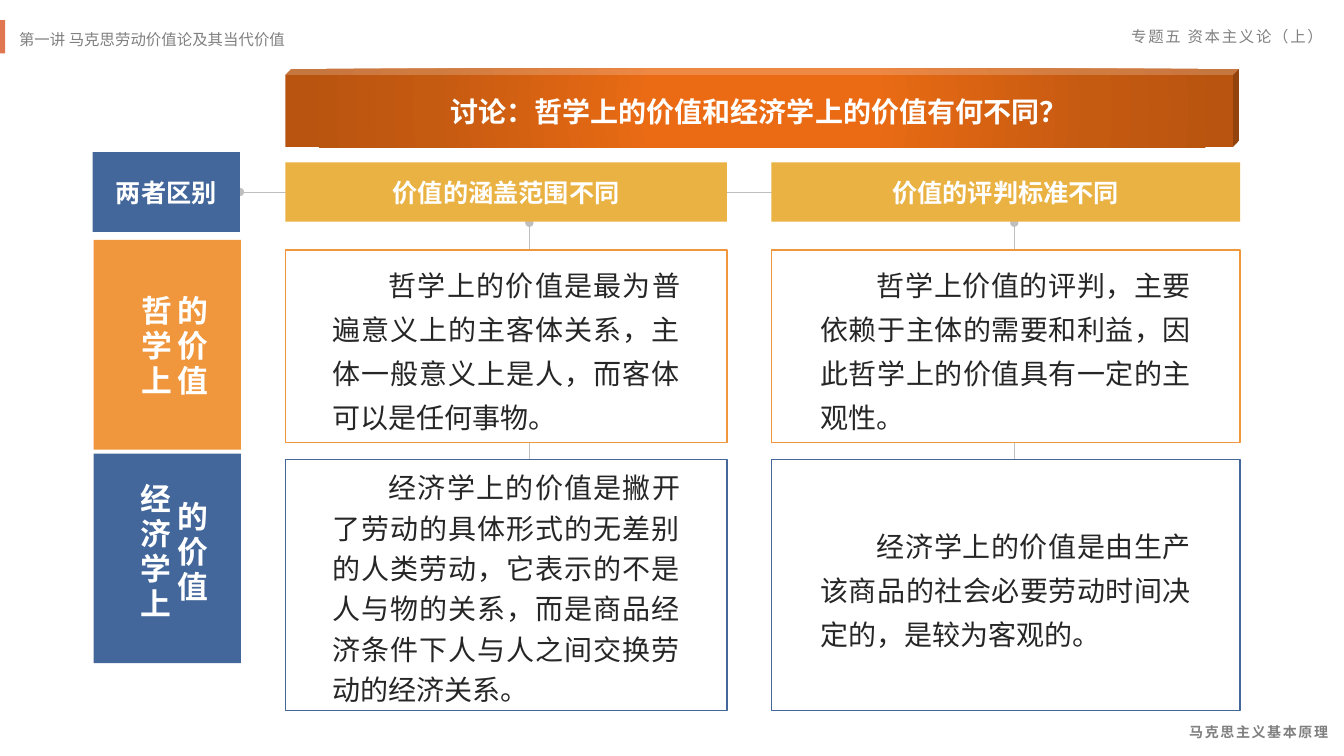
from lxml.etree import SubElement
from pptx import Presentation
from pptx.dml.color import RGBColor
from pptx.enum.shapes import MSO_CONNECTOR, MSO_SHAPE
from pptx.enum.text import MSO_ANCHOR, PP_ALIGN
from pptx.oxml import parse_xml
from pptx.oxml.ns import nsdecls, qn
from pptx.util import Inches, Pt

FONT = "Noto Sans CJK SC"
HUES = {"blue": "43679B", "orange": "F0963D", "gold": "E9B243", "red": "E17751",
        "gray": "808080", "rule": "BFBFBF", "ink": "262626", "white": "FFFFFF"}
GLOW = [(0, "EA6B14"), (23, "EA6B14"), (69, "C55A11"), (97, "B85410")]
TITLE = "讨论：哲学上的价值和经济学上的价值有何不同？"
CORNER = "两者区别"
NOTES = [
    ("专题五 资本主义论（上）", (10.2, 0.22, 3.02, 0.29), PP_ALIGN.RIGHT, 11, False, 1, 1.2),
    ("第一讲 马克思劳动价值论及其当代价值", (0.09, 0.21, 7.79, 0.3), PP_ALIGN.LEFT, 11, False, 1.2, 0),
    ("马克思主义基本原理", (10.68, 7.04, 2.59, 0.32), PP_ALIGN.RIGHT, 10, True, 1.5, 1.2),
]
COLS = [("价值的涵盖范围不同", 2.83, 4.38, 5.25), ("价值的评判标准不同", 7.65, 4.65, 10.06)]
ROWS = [
    {"name": ["的价值", "哲学上"], "hue": "orange", "side": 2.38, "top": 2.48, "high": 1.91,
     "label": (1.2, 2.83, 0.94, 1.15), "wrap": False, "align": PP_ALIGN.LEFT,
     "cards": [("哲学上的价值是最为普遍意义上的主客体关系，主体一般意义上是人，而客体可以是任何事物。", 1.3),
               ("哲学上价值的评判，主要依赖于主体的需要和利益，因此哲学上的价值具有一定的主观性。", 1.3)]},
    {"name": ["的价值", "经济学上"], "hue": "blue", "side": 4.5, "top": 4.56, "high": 2.49,
     "label": (1.19, 4.7, 0.94, 1.68), "wrap": True, "align": PP_ALIGN.CENTER,
     "cards": [("经济学上的价值是撇开了劳动的具体形式的无差别的人类劳动，它表示的不是人与物的关系，"
                "而是商品经济条件下人与人之间交换劳动的经济关系。", 1.2),
               ("经济学上的价值是由生产该商品的社会必要劳动时间决定的，是较为客观的。", 1.3)]},
]


def tint(name):
    return RGBColor.from_string(HUES[name])


def write(shape, lines, size, hue, bold=True, align=PP_ALIGN.CENTER, lead=1, gap=0):
    frame = shape.text_frame
    frame.text = "\n".join(lines)
    frame.word_wrap = True
    for para in frame.paragraphs:
        para.alignment, para.line_spacing = align, lead
        for run in para.runs:
            font = run.font
            font.size, font.bold, font.name = Pt(size), bold, FONT
            font.color.rgb = tint(hue)
            props = run._r.get_or_add_rPr()
            SubElement(props, qn("a:ea")).set("typeface", FONT)
            if gap:
                props.set("spc", str(int(gap * 100)))
    return frame


def block(slide, area, fill, edge=None, kind=MSO_SHAPE.RECTANGLE):
    shape = slide.shapes.add_shape(kind, *map(Inches, area))
    shape.shadow.inherit = False
    shape.fill.solid()
    shape.fill.fore_color.rgb = tint(fill)
    if edge:
        shape.line.color.rgb = tint(edge)
        shape.line.width = Pt(1)
    else:
        shape.line.fill.background()
    shape.text_frame.vertical_anchor = MSO_ANCHOR.MIDDLE
    return shape


def wire(slide, *ends):
    line = slide.shapes.add_connector(MSO_CONNECTOR.STRAIGHT, *map(Inches, ends))
    line.line.color.rgb = tint("rule")
    line.line.width = Pt(0.25)
    SubElement(line.line._get_or_add_ln(), qn("a:headEnd")).set("type", "oval")
    SubElement(line._element.spPr, qn("a:effectLst"))
    return line


def glow(shape):
    stops = "".join(f'<a:gs pos="{at * 1000}"><a:srgbClr val="{hue}"/></a:gs>' for at, hue in GLOW)
    fill = parse_xml(f'<a:gradFill {nsdecls("a")} rotWithShape="1"><a:gsLst>{stops}</a:gsLst>'
                     '<a:path path="circle"><a:fillToRect l="50000" t="50000" r="50000" b="50000"/>'
                     '</a:path></a:gradFill>')
    props = shape._element.spPr
    props.replace(props.find(qn("a:solidFill")), fill)


def card(slide, area, row, text, lead):
    shape = block(slide, area, "white", row["hue"])
    frame = write(shape, [text], 20, "ink", False, PP_ALIGN.JUSTIFY, lead)
    frame.margin_left = frame.margin_right = Inches(area[2] / 12 + 0.1)
    frame.paragraphs[0]._p.get_or_add_pPr().set("indent", str(Inches(0.56)))


def main():
    """Build the slide comparing two meanings of value."""
    deck = Presentation()
    deck.slide_width, deck.slide_height = Inches(13.33), Inches(7.5)
    slide = deck.slides.add_slide(deck.slide_layouts[6])

    for text, area, align, size, bold, lead, gap in NOTES:
        box = slide.shapes.add_textbox(*map(Inches, area))
        write(box, [text], size, "gray", bold, align, lead, gap)
    block(slide, (0, 0.2, 0.05, 0.33), "red")

    for row in ROWS:
        block(slide, (0.93, row["side"], 1.46, 2.08), row["hue"])
        box = slide.shapes.add_textbox(*map(Inches, row["label"]))
        frame = write(box, row["name"], 22, "white", align=row["align"], gap=3)
        frame.word_wrap = row["wrap"]
        frame._txBody.bodyPr.set("vert", "eaVert")

    for i, (_, left, wide, mid) in enumerate(COLS):
        wire(slide, mid, 2.21, mid, 6.47)
        for row in ROWS:
            card(slide, (left, row["top"], wide, row["high"]), row, *row["cards"][i])

    link = wire(slide, 2.39, 1.9, 12.29, 1.9)
    corner = block(slide, (0.92, 1.51, 1.46, 0.79), "blue")
    write(corner, [CORNER], 18, "white")
    for text, left, wide, _ in COLS:
        head = block(slide, (left, 1.61, wide, 0.59), "gold")
        write(head, [text], 18, "white")
    link.begin_connect(corner, 3)
    link.end_connect(head, 3)

    banner = block(slide, (2.83, 0.68, 9.46, 0.78), "orange", kind=MSO_SHAPE.CUBE)
    banner.adjustments[0] = 0.08
    glow(banner)
    write(banner, [TITLE], 20, "white")
    deck.save("out.pptx")


if __name__ == "__main__":
    main()
